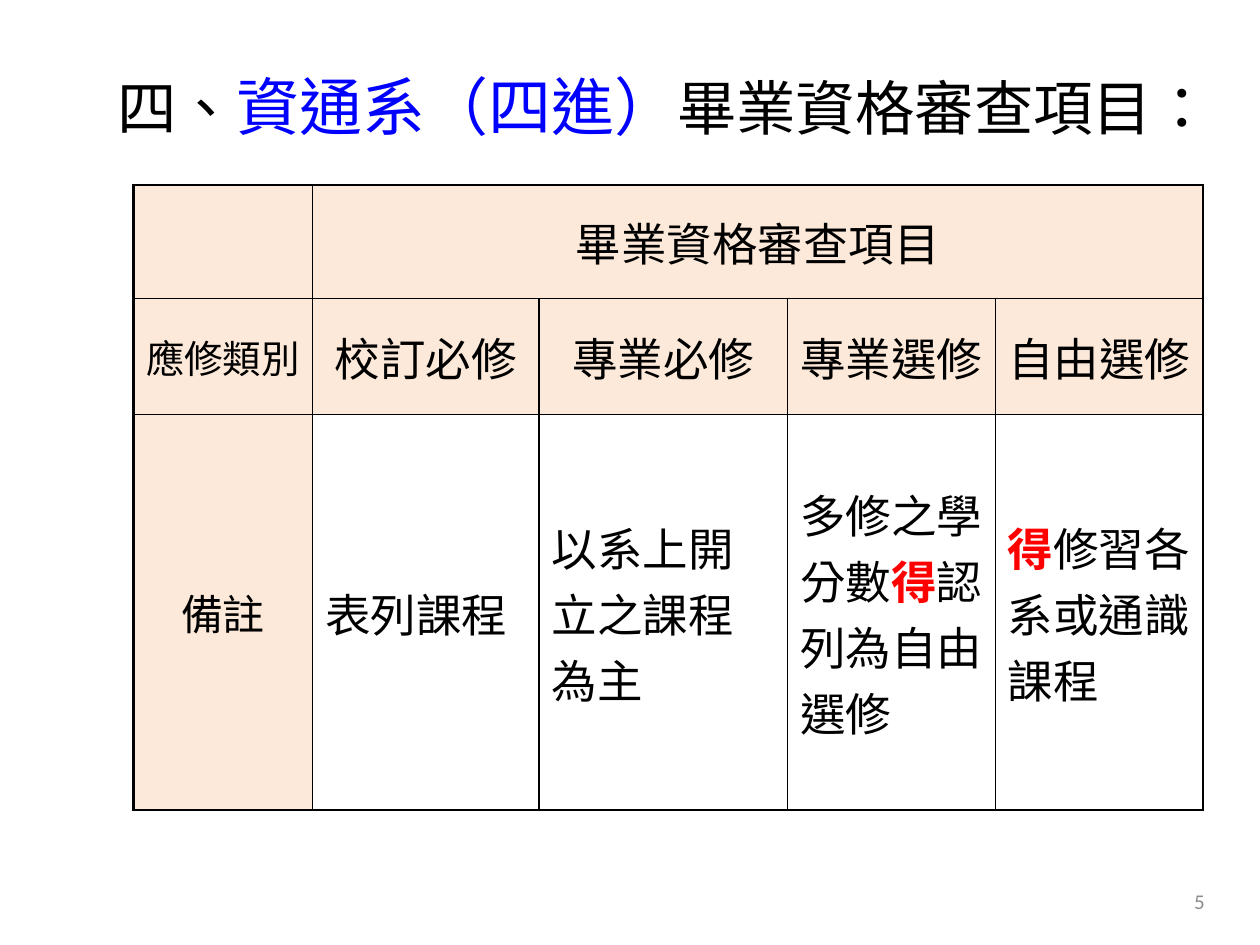
from lxml import etree
from pptx import Presentation
from pptx.dml.color import RGBColor
from pptx.enum.lang import MSO_LANGUAGE_ID
from pptx.enum.text import MSO_ANCHOR, PP_ALIGN
from pptx.oxml.ns import qn
from pptx.util import Inches, Pt

LEFT, CENTER, RIGHT = PP_ALIGN.LEFT, PP_ALIGN.CENTER, PP_ALIGN.RIGHT
MIDDLE = MSO_ANCHOR.MIDDLE
CHINESE = MSO_LANGUAGE_ID.TRADITIONAL_CHINESE

COLORS = {"black": "000000", "blue": "0000FF", "red": "FF0000",
          "gray": "8C8C8C", "peach": "FDE9D9", "white": "FFFFFF"}
TITLE_FONT, TABLE_FONT, NUMBER_FONT = "Noto Sans CJK JP", "Times New Roman", "Calibri"

COLUMN_WIDTHS = [1.42, 1.8, 1.97, 1.65, 1.65]
ROW_HEIGHTS = [0.9, 0.92, 3.14]
RED = {"color": "red", "bold": True}

# Each cell is a list of (text, format) runs
ROWS = [
    [[], [("畢業資格審查項目", {})], [], [], []],
    [[("應修類別", {"size": 22})], [("校訂必修", {})], [("專業必修", {})],
     [("專業選修", {})], [("自由選修", {})]],
    [[("備註", {"size": 24})], [("表列課程", {})], [("以系上開立之課程為主", {})],
     [("多修之學分數", {}), ("得", RED), ("認列為自由選修", {})],
     [("得", RED), ("修習各系或通識課程", {})]],
]


def add_run(paragraph, text, size=26, font=TABLE_FONT, color="black", bold=False):
    run = paragraph.add_run()
    run.text = text
    run.font.size = Pt(size)
    run.font.name = font
    run.font.bold = bold
    run.font.color.rgb = RGBColor.from_string(COLORS[color])
    run.font.language_id = CHINESE


def set_borders(cell, widths):
    """Draw black borders; widths maps each side (L, R, T, B) to points."""
    properties = cell._tc.get_or_add_tcPr()
    for position, (side, width) in enumerate(widths.items()):
        line = etree.Element(qn(f"a:ln{side}"), w=str(Pt(width)))
        fill = etree.SubElement(line, qn("a:solidFill"))
        etree.SubElement(fill, qn("a:srgbClr"), val=COLORS["black"])
        properties.insert(position, line)


def add_title(slide):
    title = slide.shapes.title
    title.left, title.top = Inches(0.83), Inches(0.29)
    title.width, title.height = Inches(8.83), Inches(1.09)
    title.text_frame.word_wrap = True
    title.text_frame.vertical_anchor = MIDDLE
    paragraph = title.text_frame.paragraphs[0]
    paragraph.alignment = LEFT
    add_run(paragraph, "四、", size=34, font=TITLE_FONT)
    add_run(paragraph, "資通系（四進）", size=36, font=TITLE_FONT, color="blue")
    add_run(paragraph, "畢業資格審查項目：", size=34, font=TITLE_FONT)


def add_review_table(slide):
    last_row, last_column = len(ROWS) - 1, len(COLUMN_WIDTHS) - 1
    table = slide.shapes.add_table(
        len(ROWS), len(COLUMN_WIDTHS), Inches(1.06), Inches(1.47),
        Inches(sum(COLUMN_WIDTHS)), Inches(sum(ROW_HEIGHTS))).table
    for column, width in zip(table.columns, COLUMN_WIDTHS):
        column.width = Inches(width)
    for row, height in zip(table.rows, ROW_HEIGHTS):
        row.height = Inches(height)
    table.cell(0, 1).merge(table.cell(0, last_column))

    for row_index, row in enumerate(ROWS):
        for column_index, runs in enumerate(row):
            cell = table.cell(row_index, column_index)
            is_header = row_index < last_row or column_index == 0
            cell.fill.solid()
            cell.fill.fore_color.rgb = RGBColor.from_string(
                COLORS["peach" if is_header else "white"])
            cell.vertical_anchor = MIDDLE
            if column_index == 0:
                cell.margin_left = cell.margin_right = Inches(0.05)
            paragraph = cell.text_frame.paragraphs[0]
            paragraph.alignment = CENTER if is_header else LEFT
            for text, text_format in runs:
                add_run(paragraph, text, **text_format)
            # The outer frame is thicker than the inner grid
            on_edge = {"L": column_index == 0, "R": column_index == last_column,
                       "T": row_index == 0, "B": row_index == last_row}
            set_borders(cell, {side: 1.5 if edge else 1
                               for side, edge in on_edge.items()})


def add_slide_number(slide):
    box = slide.shapes.add_textbox(Inches(7.33), Inches(6.95), Inches(2.33), Inches(0.4))
    box.text_frame.word_wrap = True
    box.text_frame.vertical_anchor = MIDDLE
    paragraph = box.text_frame.paragraphs[0]
    paragraph.alignment = RIGHT
    add_run(paragraph, "5", size=12, font=NUMBER_FONT, color="gray")


def main():
    presentation = Presentation()
    presentation.slide_width, presentation.slide_height = Inches(10), Inches(7.5)
    slide = presentation.slides.add_slide(presentation.slide_layouts[5])
    add_slide_number(slide)
    add_review_table(slide)
    add_title(slide)
    presentation.save("out.pptx")


if __name__ == "__main__":
    main()
